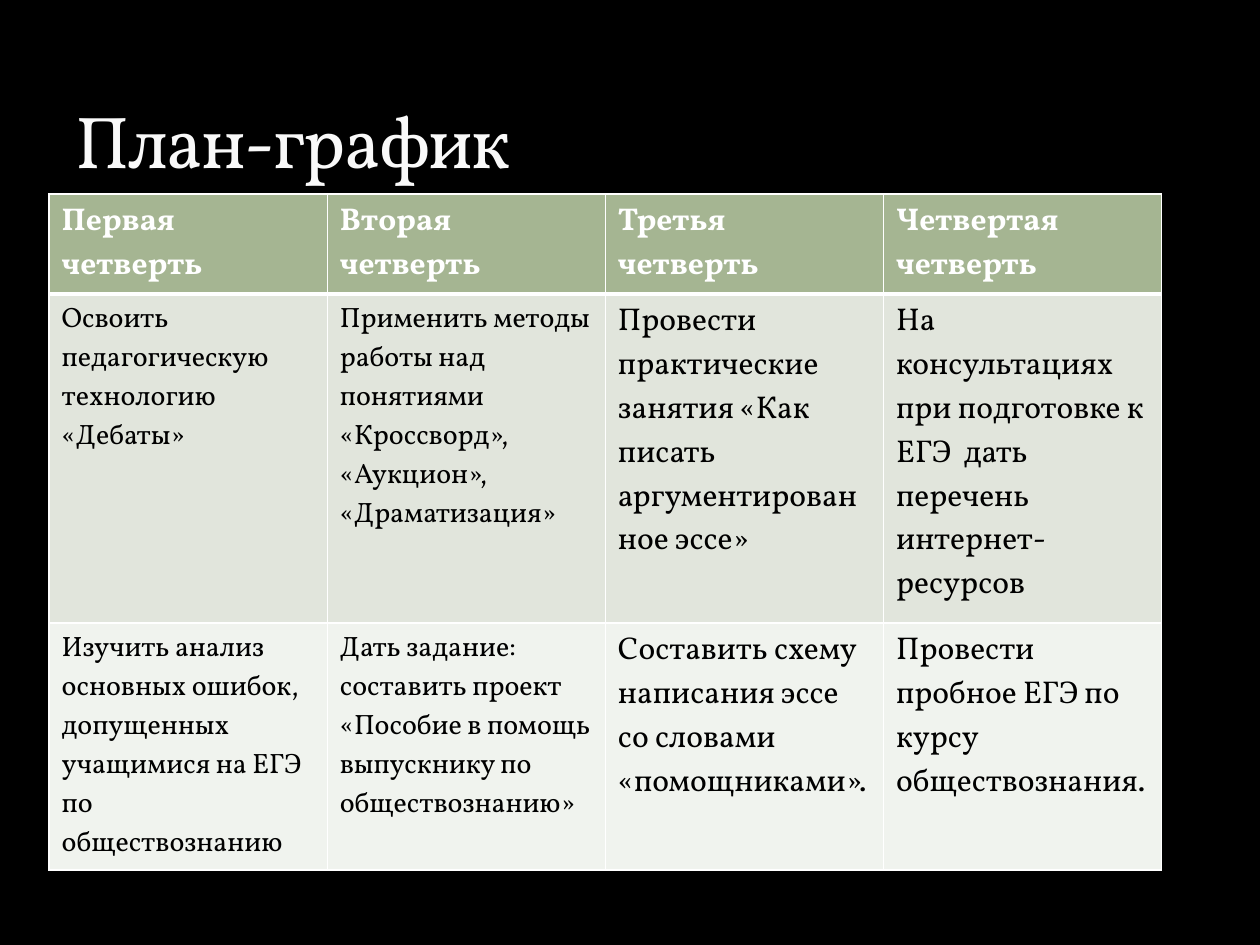
import pptx
import pptx.dml.color
import pptx.enum.text
import pptx.oxml
import pptx.oxml.ns
import pptx.util
from pptx.dml.color import RGBColor
from pptx.util import Cm

BLACK = RGBColor(0x00, 0x00, 0x00)
WHITE = RGBColor(0xFF, 0xFF, 0xFF)
TITLE_WHITE = RGBColor(0xF9, 0xF9, 0xF9)
TITLE_EDGE = RGBColor(0x3C, 0x44, 0x22)
HEADER_GREEN = RGBColor(0xA5, 0xB5, 0x92)
BAND_DARK = RGBColor(0xE1, 0xE5, 0xDC)
BAND_LIGHT = RGBColor(0xF0, 0xF3, 0xEE)

FONT = "Vollkorn"
HEADER_SIZES = (18, 18, 18, 18)
BODY_SIZES = (16, 16, 18, 18)
QUARTERS = (
    "Первая\nчетверть",
    "Вторая четверть",
    "Третья четверть",
    "Четвертая четверть",
)
FIRST_TASKS = (
    "Освоить педагогическую технологию «Дебаты»",
    "Применить методы работы над понятиями «Кроссворд», «Аукцион», «Драматизация»",
    "Провести практические занятия «Как писать аргументированное эссе»",
    "На консультациях при подготовке к ЕГЭ  дать перечень интернет-ресурсов",
)
SECOND_TASKS = (
    "Изучить анализ основных ошибок, допущенных учащимися на ЕГЭ по обществознанию",
    "Дать задание: составить проект «Пособие в помощь выпускнику по обществознанию»",
    "Составить схему написания эссе со словами «помощниками».",
    "Провести пробное ЕГЭ по курсу обществознания.",
)
ROWS = (
    {"texts": QUARTERS, "height": 2.02, "fill": HEADER_GREEN, "color": WHITE,
     "bold": True, "sizes": HEADER_SIZES, "top": 1, "bottom": 3},
    {"texts": FIRST_TASKS, "height": 6.63, "fill": BAND_DARK, "color": BLACK,
     "bold": False, "sizes": BODY_SIZES, "top": 3, "bottom": 1},
    {"texts": SECOND_TASKS, "height": 4.98, "fill": BAND_LIGHT, "color": BLACK,
     "bold": False, "sizes": BODY_SIZES, "top": 1, "bottom": 1},
)


def format_text(frame, text, color, **values):
    """Write the text and give every span the same format."""
    frame.text = text
    for para in frame.paragraphs:
        for span in para.runs:
            for name, value in {"name": FONT, **values}.items():
                setattr(span.font, name, value)
            span.font.color.rgb = color


def line_xml(tag, color, points, alpha=100):
    """Return a solid line element of the given tag."""
    return pptx.oxml.parse_xml(
        f'<a:{tag} {pptx.oxml.ns.nsdecls("a")} w="{pptx.util.Pt(points)}">'
        f'<a:solidFill><a:srgbClr val="{color}"><a:alpha val="{alpha * 1000}"/>'
        f'</a:srgbClr></a:solidFill></a:{tag}>'
    )


def add_title(page, left, top, width, height):
    """Place the outlined title at the bottom of its box."""
    box = page.shapes.add_textbox(left, top, width, height)
    frame = box.text_frame
    settings = {"word_wrap": True, "vertical_anchor": pptx.enum.text.MSO_ANCHOR.BOTTOM}
    for name, value in settings.items():
        setattr(frame, name, value)
    format_text(frame, "План-график", TITLE_WHITE, size=pptx.util.Pt(42))
    properties = frame.paragraphs[0].runs[0].font._element
    properties.set("spc", "-100")
    properties.insert(0, line_xml("ln", TITLE_EDGE, 0.25, 25))


def format_cell(cell, text, size, style):
    """Fill one cell with its text, borders and background."""
    format_text(cell.text_frame, text, style["color"],
                size=pptx.util.Pt(size), bold=style["bold"])
    properties = cell._tc.get_or_add_tcPr()
    borders = {"lnL": 1, "lnR": 1, "lnT": style["top"], "lnB": style["bottom"]}
    for tag, points in borders.items():
        properties.append(line_xml(tag, WHITE, points))
    cell.fill.solid()
    cell.fill.fore_color.rgb = style["fill"]


def add_schedule(page, left, top, width, height):
    """Place the schedule table with equal columns."""
    table = page.shapes.add_table(
        len(ROWS), len(QUARTERS), left, top, width, height
    ).table
    for row, style in enumerate(ROWS):
        table.rows[row].height = Cm(style["height"])
        for column, (text, size) in enumerate(zip(style["texts"], style["sizes"])):
            format_cell(table.cell(row, column), text, size, style)


def main():
    """Build and save the deck."""
    deck = pptx.Presentation()
    deck.slide_width, deck.slide_height = Cm(25.4), Cm(19.05)
    page = deck.slides.add_slide(deck.slide_layouts[6])
    page.background.fill.solid()
    page.background.fill.fore_color.rgb = BLACK
    add_title(page, Cm(1.27), Cm(0.43), Cm(22.86), Cm(3.38))
    add_schedule(page, Cm(0.99), Cm(3.91), Cm(22.43),
                 Cm(sum(style["height"] for style in ROWS)))
    deck.save("out.pptx")


if __name__ == "__main__":
    main()
